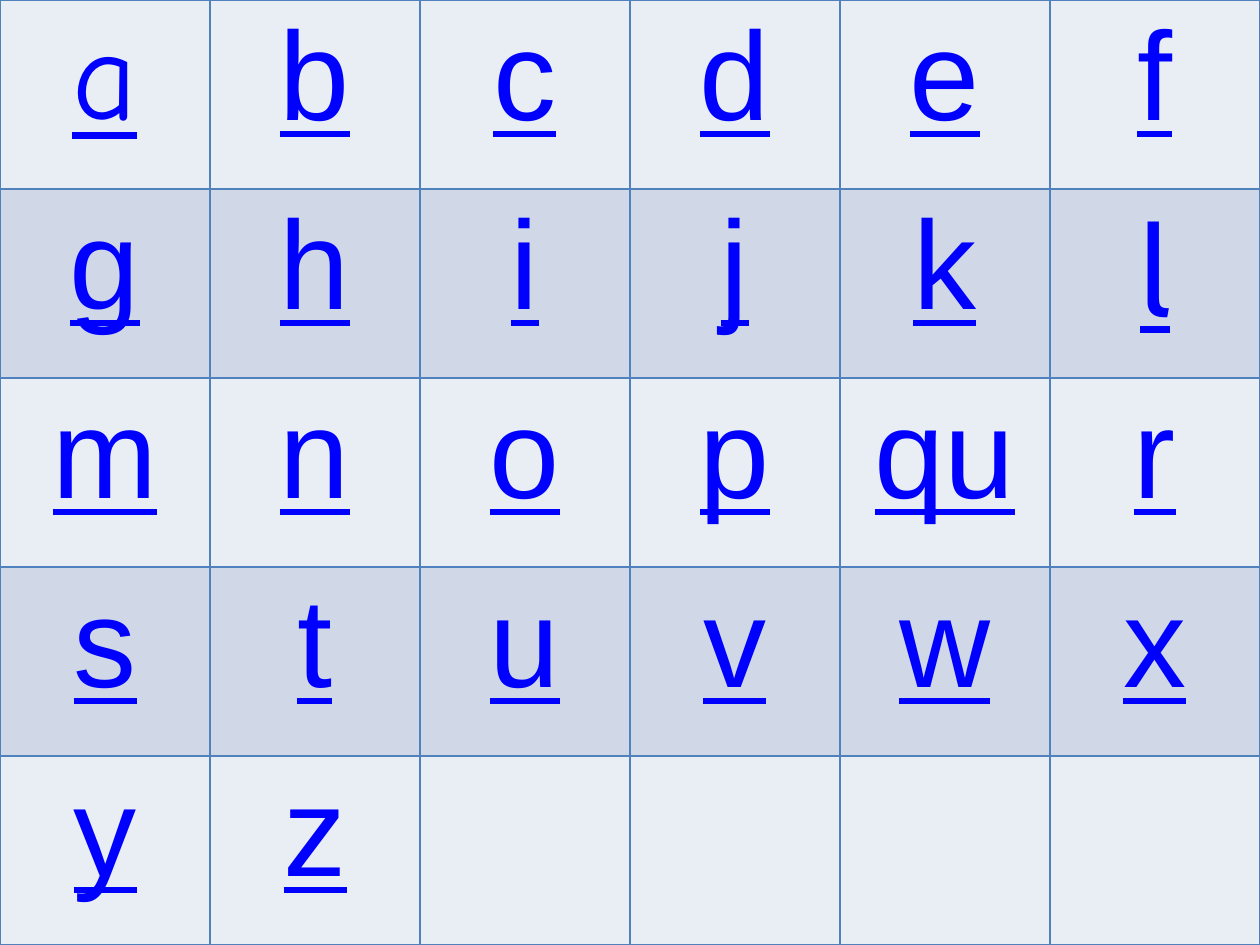
from dataclasses import dataclass

from lxml import etree
from pptx import Presentation
from pptx import util as u
from pptx.dml.color import RGBColor
from pptx.enum import text
from pptx.oxml.ns import qn

COLORS = {"letter": "0000FF", "border": "4F81BD", "light": "E9EDF4", "band": "D0D8E8"}
ROWS, COLS = 5, 6
WIDTH, HEIGHT = u.Cm(25.4), u.Cm(19.05)
LETTER_FORMAT = {"size": u.Pt(72), "underline": True}
SPECIAL_FONTS = {"a": "Comic Neue", "l": "Cabin"}


@dataclass(frozen=True)
class LetterCell:
    letter: str
    fill: str
    font: str


def alphabet_cells() -> list[LetterCell]:
    """List the grid row by row, with q written as qu and blanks at the end."""
    letters = ["qu" if c == "q" else c for c in "abcdefghijklmnopqrstuvwxyz"]
    letters += [""] * (ROWS * COLS - len(letters))
    return [
        LetterCell(letter, "band" if i // COLS % 2 else "light",
                   SPECIAL_FONTS.get(letter, "Arial"))
        for i, letter in enumerate(letters)
    ]


def add_borders(cell) -> None:
    """Line all four sides; the lines must come before the fill in tcPr."""
    tc_pr = cell._tc.get_or_add_tcPr()
    for i, side in enumerate(("lnL", "lnR", "lnT", "lnB")):
        ln = etree.Element(qn(f"a:{side}"), w=str(u.Pt(1)))
        fill = etree.SubElement(ln, qn("a:solidFill"))
        etree.SubElement(fill, qn("a:srgbClr"), val=COLORS["border"])
        tc_pr.insert(i, ln)


def draw_cell(cell, item: LetterCell) -> None:
    cell.fill.solid()
    cell.fill.fore_color.rgb = RGBColor.from_string(COLORS[item.fill])
    add_borders(cell)
    if not item.letter:
        return
    p = cell.text_frame.paragraphs[0]
    p.alignment = text.PP_ALIGN.CENTER
    r = p.add_run()
    r.text = item.letter
    for name, value in {**LETTER_FORMAT, "name": item.font}.items():
        setattr(r.font, name, value)
    r.font.color.rgb = RGBColor.from_string(COLORS["letter"])


def main() -> None:
    prs = Presentation()
    prs.slide_width, prs.slide_height = WIDTH, HEIGHT
    slide = prs.slides.add_slide(prs.slide_layouts[6])
    table = slide.shapes.add_table(ROWS, COLS, 0, 0, WIDTH, HEIGHT).table
    for cell, item in zip(table.iter_cells(), alphabet_cells()):
        draw_cell(cell, item)
    prs.save("out.pptx")


if __name__ == "__main__":
    main()
